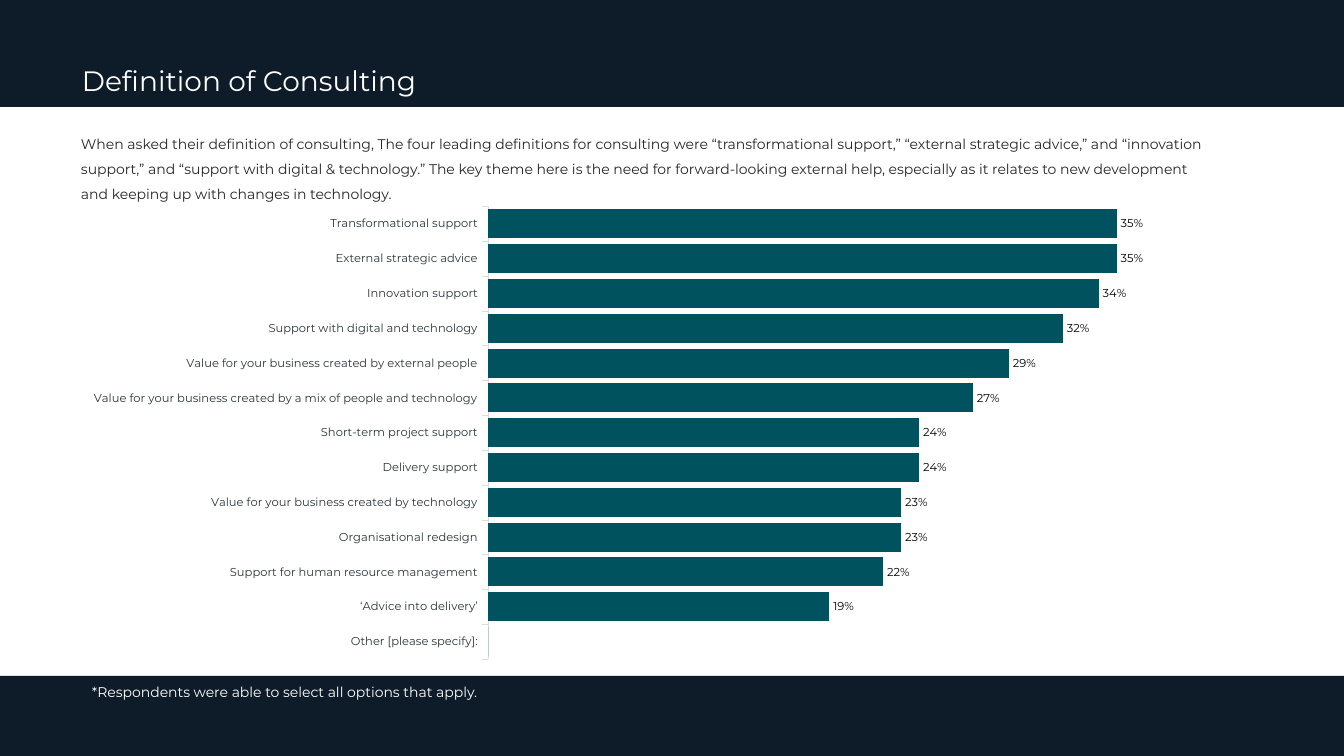
from lxml import etree
from pptx import Presentation
from pptx.chart.data import CategoryChartData
from pptx.dml.color import RGBColor
from pptx.enum.chart import XL_CHART_TYPE, XL_LABEL_POSITION, XL_TICK_MARK
from pptx.enum.shapes import MSO_SHAPE
from pptx.util import Pt

BAR = XL_CHART_TYPE.BAR_CLUSTERED
OUT_END = XL_LABEL_POSITION.OUTSIDE_END
TICK_OUT = XL_TICK_MARK.OUTSIDE
RECT = MSO_SHAPE.RECTANGLE
WIDE, HIGH = 1344, 756
SCALE = 12192000 / WIDE
FACE = "Montserrat"
NAVY, TEAL, WHITE = "0E1C29", "00535E", "FFFFFF"
CHART_NS = "http://schemas.openxmlformats.org/drawingml/2006/chart"


def px(*vals):
    """Turn px lengths into EMU."""
    return [round(v * SCALE) for v in vals]


def style(font, size, color):
    font.name = FACE
    font.size = Pt(size)
    font.color.rgb = RGBColor.from_string(color)


prs = Presentation()
prs.slide_width, prs.slide_height = px(WIDE, HIGH)
slide = prs.slides.add_slide(prs.slide_layouts[6])
shapes = slide.shapes

# Header and footer bands
for top, high in [(676, 80), (0, 107)]:
    band = shapes.add_shape(RECT, *px(0, top, WIDE, high))
    band.shadow.inherit = False
    band.fill.solid()
    band.fill.fore_color.rgb = RGBColor.from_string(NAVY)
    band.line.fill.background()

# Bar chart, listed from bottom to top
answers = [
    ("Other [please specify]:", 0),
    ("‘Advice into delivery’", 0.19),
    ("Support for human resource management", 0.22),
    ("Organisational redesign", 0.23),
    ("Value for your business created by technology", 0.23),
    ("Delivery support", 0.24),
    ("Short-term project support", 0.24),
    ("Value for your business created by a mix of people and technology", 0.27),
    ("Value for your business created by external people", 0.29),
    ("Support with digital and technology", 0.32),
    ("Innovation support", 0.34),
    ("External strategic advice", 0.35),
    ("Transformational support", 0.35),
]
data = CategoryChartData(number_format="0%")
data.categories = [name for name, share in answers]
data.add_series("Series 1", [share for name, share in answers])
chart = shapes.add_chart(BAR, *px(72, 197, 1159, 473), data).chart
chart.has_legend = False
chart.has_title = False
style(chart.font, 8.2, "000000")

cat = chart.category_axis
style(cat.tick_labels.font, 8.2, "2C333A")
cat.major_tick_mark = TICK_OUT
cat.has_major_gridlines = False
cat.format.line.color.rgb = RGBColor.from_string("DCDCDC")
cat.format.line.width = Pt(0.25)

val = chart.value_axis
val.minimum_scale, val.maximum_scale = 0, 0.4
val.has_major_gridlines = False
val.visible = False

plot = chart.plots[0]
plot.gap_width = 20
plot.vary_by_categories = False
bars = plot.series[0]
bars.format.fill.solid()
bars.format.fill.fore_color.rgb = RGBColor.from_string(TEAL)
plot.has_data_labels = True
labels = plot.data_labels
labels.show_value = True
labels.number_format = "0%;;"  # the zero bar has no label
labels.number_format_is_linked = False
labels.position = OUT_END
style(labels.font, 8.2, "000000")

# Fix the inner plot area as shares of the chart frame
area = chart.plots[0]._element.getparent()
for old in area.findall(f"{{{CHART_NS}}}layout"):
    area.remove(old)
layout = etree.Element(f"{{{CHART_NS}}}layout")
manual = etree.SubElement(layout, f"{{{CHART_NS}}}manualLayout")
for tag, value in [("layoutTarget", "inner"), ("xMode", "edge"), ("yMode", "edge"),
                   ("x", 0.359), ("y", 0.02), ("w", 0.62), ("h", 0.957)]:
    etree.SubElement(manual, f"{{{CHART_NS}}}{tag}").set("val", str(value))
area.insert(0, layout)

# Title, footnote and lead text: place, size, colour, spacing, inset, words
texts = [
    ((72, 62, 972, 56), 20, WHITE, 0.9, True, "Definition of Consulting"),
    ((82, 679, 1012, 28), 10, WHITE, 1, True,
     "*Respondents were able to select all options that apply."),
    ((81, 127, 1134, 84), 10, "262626", 1.5, False,
     "When asked their definition of consulting, The four leading definitions for "
     "consulting were “transformational support,” “external strategic advice,” and "
     "“innovation support,” and “support with digital & technology.” The key theme "
     "here is the need for forward-looking external help, especially as it relates "
     "to new development and keeping up with changes in technology."),
]
for place, size, color, space, inset, words in texts:
    frame = shapes.add_textbox(*px(*place)).text_frame
    frame.word_wrap = True
    if not inset:
        frame.margin_left = frame.margin_right = 0
        frame.margin_top = frame.margin_bottom = 0
    para = frame.paragraphs[0]
    para.line_spacing = space
    run = para.add_run()
    run.text = words
    style(run.font, size, color)

prs.save("out.pptx")
